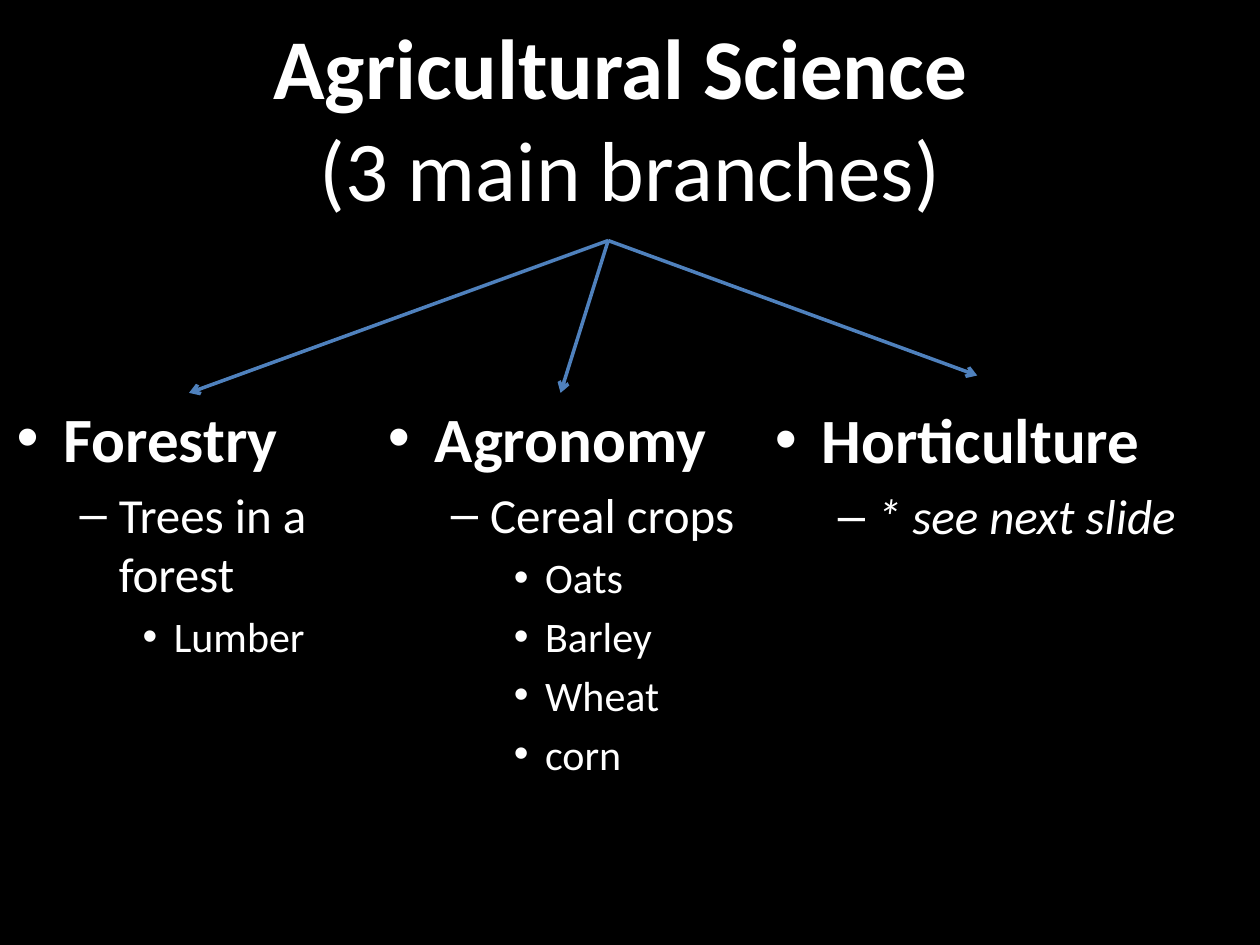
"""Build a slide on the three main branches of agricultural science."""
from lxml import etree
from pptx import Presentation
from pptx.dml.color import RGBColor
from pptx.enum.shapes import MSO_CONNECTOR
from pptx.enum.text import MSO_ANCHOR, MSO_AUTO_SIZE, PP_ALIGN
from pptx.oxml.ns import qn
from pptx.util import Cm, Pt

STRAIGHT = MSO_CONNECTOR.STRAIGHT
MIDDLE, TOP = MSO_ANCHOR.MIDDLE, MSO_ANCHOR.TOP
NO_FIT = MSO_AUTO_SIZE.NONE
CENTER = PP_ALIGN.CENTER

BLACK = RGBColor(0x00, 0x00, 0x00)
WHITE = RGBColor(0xFF, 0xFF, 0xFF)
BLUE = RGBColor(0x4F, 0x81, 0xBD)

FONT = "Calibri"
LEVELS = [
    {"size": 36, "bold": True, "margin": 0.95, "hanging": 0.95, "bullet": "•"},
    {"size": 28, "bold": False, "margin": 2.06, "hanging": 0.79, "bullet": "–"},
    {"size": 24, "bold": False, "margin": 3.17, "hanging": 0.63, "bullet": "•"},
]
FORESTRY = [(0, "Forestry"), (1, "Trees in a forest"), (2, "Lumber")]
AGRONOMY = [(0, "Agronomy"), (1, "Cereal crops"), (2, "Oats"),
            (2, "Barley"), (2, "Wheat"), (2, "corn")]
HORTICULTURE = [(0, "Horticulture"), (1, "* see next slide")]
COLUMN_HEIGHT = 12.57
ARROW_START = (12.26, 4.85)
ARROW_ENDS = [(3.81, 7.92), (11.3, 7.92), (19.7, 7.57)]


def set_values(target, values):
    """Set each named attribute of the target."""
    for name, value in values.items():
        setattr(target, name, value)


def place(shape, left, top, width, height):
    """Move and size a shape, in centimetres."""
    set_values(shape, {"left": Cm(left), "top": Cm(top),
                       "width": Cm(width), "height": Cm(height)})


def add_span(para, text, size, bold, italic=False):
    """Add white text to a paragraph."""
    span = para.add_run()
    span.text = text
    set_values(span.font, {"name": FONT, "size": Pt(size),
                           "bold": bold, "italic": italic})
    span.font.color.rgb = WHITE


def format_bullet(para, level):
    """Give a paragraph the indent, spacing and bullet of its level."""
    style = LEVELS[level]
    para.level = level
    properties = para._p.get_or_add_pPr()
    properties.set("marL", str(Cm(style["margin"])))
    properties.set("indent", str(-Cm(style["hanging"])))
    spacing = etree.SubElement(properties, qn("a:spcBef"))
    etree.SubElement(spacing, qn("a:spcPct"), val="20000")
    etree.SubElement(properties, qn("a:buFont"), typeface="Arial")
    etree.SubElement(properties, qn("a:buChar"), char=style["bullet"])


def fill_title(title):
    """Write the two-line heading."""
    place(title, 1.27, 0.76, 22.86, 3.18)
    set_values(title.text_frame, {"word_wrap": True, "auto_size": NO_FIT,
                                  "vertical_anchor": MIDDLE})
    para = title.text_frame.paragraphs[0]
    para.alignment = CENTER
    add_span(para, "Agricultural Science ", 48.6, True)
    para.add_line_break()
    add_span(para, "(3 main branches)", 48.6, False)


def fill_branch(box, items, italic_detail=False):
    """Write one branch as a bulleted outline."""
    frame = box.text_frame
    set_values(frame, {"word_wrap": True, "auto_size": NO_FIT,
                       "vertical_anchor": TOP})
    for index, (level, text) in enumerate(items):
        para = frame.add_paragraph() if index else frame.paragraphs[0]
        format_bullet(para, level)
        style = LEVELS[level]
        add_span(para, text, style["size"], style["bold"],
                 italic_detail and level > 0)


def add_arrow(slide, start, end):
    """Draw a blue arrow between two points in centimetres."""
    arrow = slide.shapes.add_connector(
        STRAIGHT, *(Cm(value) for value in start + end))
    arrow.line.color.rgb = BLUE
    arrow.line.width = Pt(2)
    etree.SubElement(arrow.line._get_or_add_ln(), qn("a:tailEnd"), type="arrow")
    etree.SubElement(arrow._element.spPr, qn("a:effectLst"))


def main():
    """Build and save the deck."""
    deck = Presentation()
    set_values(deck, {"slide_width": Cm(25.4), "slide_height": Cm(19.05)})
    page = deck.slides.add_slide(deck.slide_layouts[1])
    page.background.fill.solid()
    page.background.fill.fore_color.rgb = BLACK

    fill_title(page.shapes.title)
    forestry = page.placeholders[1]
    agronomy, horticulture = (
        page.shapes.add_textbox(0, 0, 0, 0) for _ in range(2))
    place(forestry, 0.08, 7.92, 7.49, COLUMN_HEIGHT)
    place(agronomy, 7.57, 7.92, 7.49, COLUMN_HEIGHT)
    place(horticulture, 15.37, 7.95, 10.03, COLUMN_HEIGHT)
    fill_branch(forestry, FORESTRY)
    fill_branch(agronomy, AGRONOMY)
    fill_branch(horticulture, HORTICULTURE, italic_detail=True)

    for end in ARROW_ENDS:
        add_arrow(page, ARROW_START, end)
    deck.save("out.pptx")


if __name__ == "__main__":
    main()
